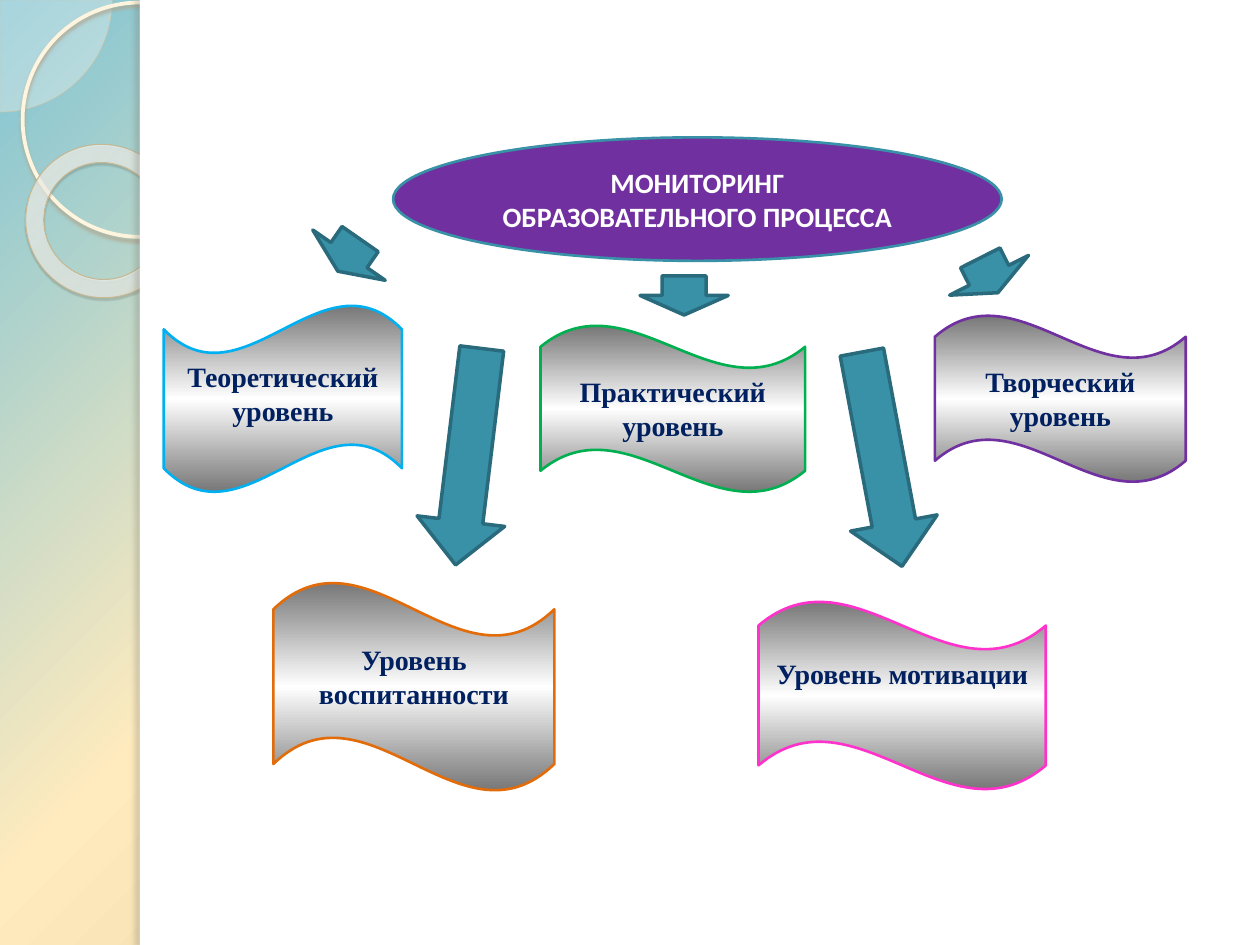
from dataclasses import dataclass

import lxml.etree
import pptx
import pptx.dml.color
import pptx.enum.shapes
import pptx.enum.text
import pptx.oxml.ns
import pptx.util

Inches = pptx.util.Inches
Pt = pptx.util.Pt
SHAPES = pptx.enum.shapes.MSO_SHAPE
qn = pptx.oxml.ns.qn


@dataclass(frozen=True)
class Theme:
    white: str = "FFFFFF"
    purple: str = "7030A0"
    teal: str = "3891A7"
    teal_dark: str = "296B7C"
    navy: str = "002060"
    silver: str = "767676"
    sky: str = "00B0F0"
    green: str = "00B050"
    orange: str = "E36C0A"
    pink: str = "FF33CC"
    pie: str = "FEFAF4"
    pie_line: str = "D3C39F"
    ring: str = "FFF5DE"
    ring_shadow: str = "B0A68F"
    donut_line: str = "C7B893"
    donut_shadow: str = "5A5444"
    panel_shadow: str = "736F63"
    backdrop: tuple = ((0, "7EC3D4", 100), (40, "FFEBBE", 100), (100, "C9B484", 100))
    donut: tuple = ((0, "FFFCF6", 70), (70, "FFFEFB", 55), (100, "F0D28E", 60))
    heading_font: str = "Calibri"
    level_font: str = "Times New Roman"
    text_size: int = 16


THEME = Theme()


def rgb(color):
    return pptx.dml.color.RGBColor.from_string(color)


def add_node(parent, tag, **attributes):
    node = lxml.etree.SubElement(parent, qn(tag))
    for key, value in attributes.items():
        node.set(key, str(value))
    return node


def add_color(parent, color, opacity):
    node = add_node(parent, "a:srgbClr", val=color)
    if opacity < 100:
        add_node(node, "a:alpha", val=opacity * 1000)


def set_gradient(fill, owner, stops, focus=None):
    fill.gradient()
    gradient = owner.find(".//" + qn("a:gradFill"))
    for child in list(gradient):
        gradient.remove(child)
    stop_list = add_node(gradient, "a:gsLst")
    for position, color, opacity in stops:
        add_color(add_node(stop_list, "a:gs", pos=position * 1000), color, opacity)
    if focus:
        circle = add_node(gradient, "a:path", path="circle")
        edges = {side: value * 1000 for side, value in zip("ltrb", focus)}
        add_node(circle, "a:fillToRect", **edges)
    else:
        add_node(gradient, "a:lin", ang=90 * 60000, scaled=0)


def add_shadow(shape, color, opacity, blur, distance, angle):
    effects = shape._element.spPr.find(qn("a:effectLst"))
    outer = add_node(effects, "a:outerShdw", blurRad=Pt(blur), dist=Pt(distance),
                     dir=angle * 60000, algn="tl", rotWithShape=0)
    add_color(outer, color, opacity)


def add_figure(slide, kind, box, fill=None, line=None, width=1.5, rotation=0):
    shape = slide.shapes.add_shape(kind, *(Inches(length) for length in box))
    shape.shadow.inherit = False
    shape.rotation = rotation
    if fill:
        shape.fill.solid()
        shape.fill.fore_color.rgb = rgb(fill)
    else:
        shape.fill.background()
    if line:
        shape.line.color.rgb = rgb(line)
        shape.line.width = Pt(width)
    else:
        shape.line.fill.background()
    return shape


def write_label(shape, text, font_name, color, anchor):
    frame = shape.text_frame
    frame.word_wrap = True
    frame.vertical_anchor = anchor
    paragraph = frame.paragraphs[0]
    paragraph.text = text
    paragraph.alignment = pptx.enum.text.PP_ALIGN.CENTER
    paragraph.font.name = font_name
    paragraph.font.size = Pt(THEME.text_size)
    paragraph.font.bold = True
    paragraph.font.color.rgb = rgb(color)
    return paragraph


def draw_side_ornament(slide, box):
    left, top, width, height = box
    set_gradient(slide.background.fill, slide._element, THEME.backdrop,
                 (-24, -20, 124, 120))

    radius = 0.89
    pie = add_figure(slide, SHAPES.PIE,
                     (left - radius, top - radius, 2 * radius, 2 * radius),
                     THEME.pie, THEME.pie_line, 0.25)
    pie.adjustments[0] = 0
    pie.adjustments[1] = 54
    pie_color = pie._element.spPr.find(qn("a:solidFill")).find(qn("a:srgbClr"))
    add_node(pie_color, "a:alpha", val=33000)

    ring = add_figure(slide, SHAPES.OVAL, (left + 0.18, top + 0.02, 1.86, 1.86),
                      None, THEME.ring, 2.15)
    add_shadow(ring, THEME.ring_shadow, 85, 2, 2, 90)

    donut = add_figure(slide, SHAPES.DONUT, (left + 0.2, top + 1.15, 1.23, 1.21),
                       None, THEME.donut_line, 0.58, 38.6)
    donut.adjustments[0] = 0.12
    set_gradient(donut.fill, donut._element, THEME.donut, (-408, -50, 508, 150))
    add_shadow(donut, THEME.donut_shadow, 35, 1, 1.2, 75)

    panel_left = left + width
    add_figure(slide, SHAPES.RECTANGLE, (panel_left, top, 10 - panel_left, height),
               THEME.white)
    edge = add_figure(slide, SHAPES.RECTANGLE, (panel_left, top, 0.08, height),
                      THEME.white)
    add_shadow(edge, THEME.panel_shadow, 25, 3, 3, 180)


def draw_heading(slide, box, text):
    heading = add_figure(slide, SHAPES.OVAL, box, THEME.purple, THEME.teal)
    write_label(heading, text, THEME.heading_font, THEME.white,
                pptx.enum.text.MSO_ANCHOR.MIDDLE)


def draw_level(slide, box, text, outline, mirrored=False):
    level = add_figure(slide, SHAPES.WAVE, box, None, outline)
    level.adjustments[0] = 0.13
    level.adjustments[1] = 0
    set_gradient(level.fill, level._element,
                 ((0, THEME.silver, 100), (50, THEME.white, 100), (100, THEME.silver, 100)))
    if mirrored:
        level._element.spPr.find(qn("a:xfrm")).set("flipH", "1")
    label = write_label(level, text, THEME.level_font, THEME.navy,
                        pptx.enum.text.MSO_ANCHOR.TOP)
    label.space_after = Pt(10)


def draw_arrow(slide, box, rotation):
    add_figure(slide, SHAPES.DOWN_ARROW, box, THEME.teal, THEME.teal_dark, 2, rotation)


def main():
    presentation = pptx.Presentation()
    presentation.slide_width = Inches(10)
    presentation.slide_height = Inches(7.5)
    slide = presentation.slides.add_slide(presentation.slide_layouts[6])

    draw_side_ornament(slide, (0, 0, 1.11, 7.5))
    draw_heading(slide, (3.12, 1.09, 4.83, 0.98), "МОНИТОРИНГ ОБРАЗОВАТЕЛЬНОГО ПРОЦЕССА")

    levels = (
        ((1.3, 2.42, 1.89, 1.49), "Теоретический уровень", THEME.sky, True),
        ((4.29, 2.58, 2.1, 1.33), "Практический уровень", THEME.green, False),
        ((7.42, 2.5, 1.99, 1.33), "Творческий уровень", THEME.purple, False),
        ((2.17, 4.62, 2.23, 1.66), "Уровень воспитанности", THEME.orange, False),
        ((6.02, 4.77, 2.28, 1.5), "Уровень мотивации", THEME.pink, False),
    )
    for box, text, outline, mirrored in levels:
        draw_level(slide, box, text, outline, mirrored)

    short, long = 0.31, 1.73
    arrows = ((2.42, 1.87, short, 34.8), (5.08, 2.19, short, 0), (7.5, 2.03, short, 333.2),
              (3.37, 2.76, long, 6.9), (6.65, 2.78, long, 349.4))
    for left, top, length, rotation in arrows:
        draw_arrow(slide, (left, top, 0.7, length), rotation)

    presentation.save("out.pptx")


if __name__ == "__main__":
    main()
